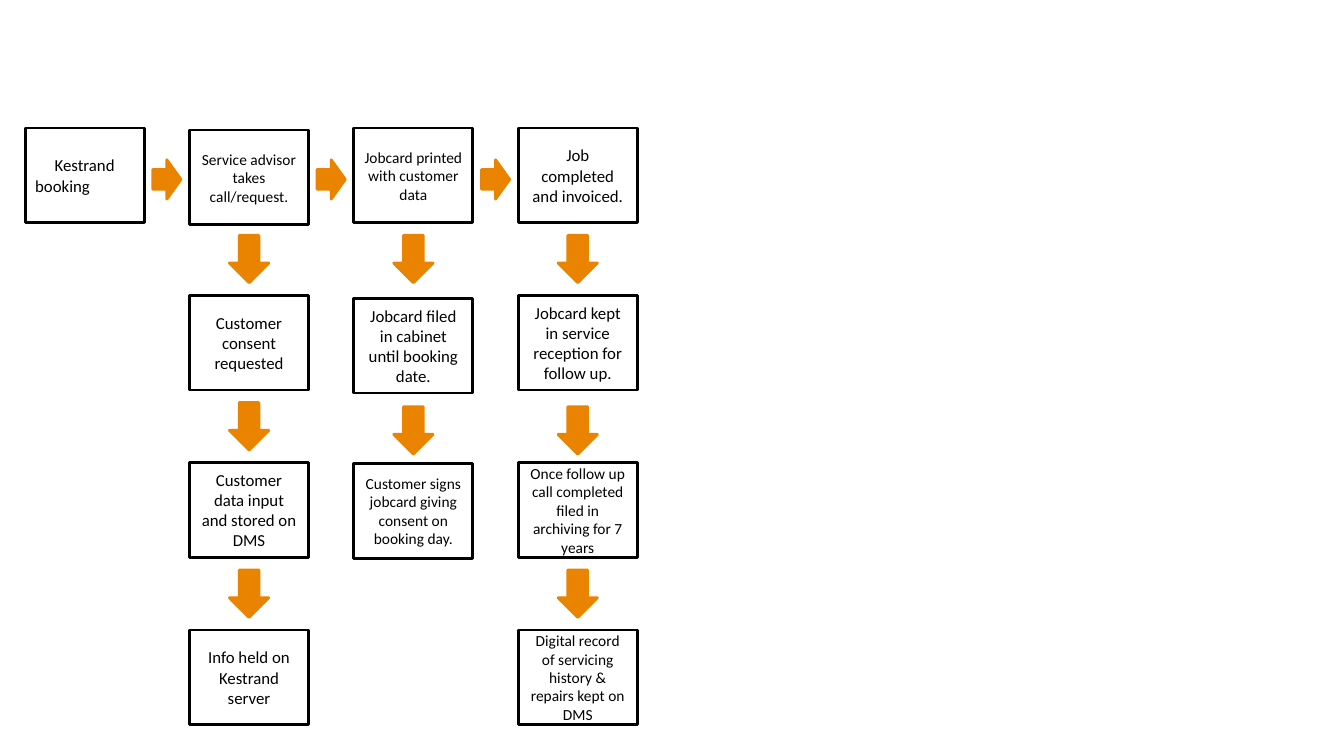
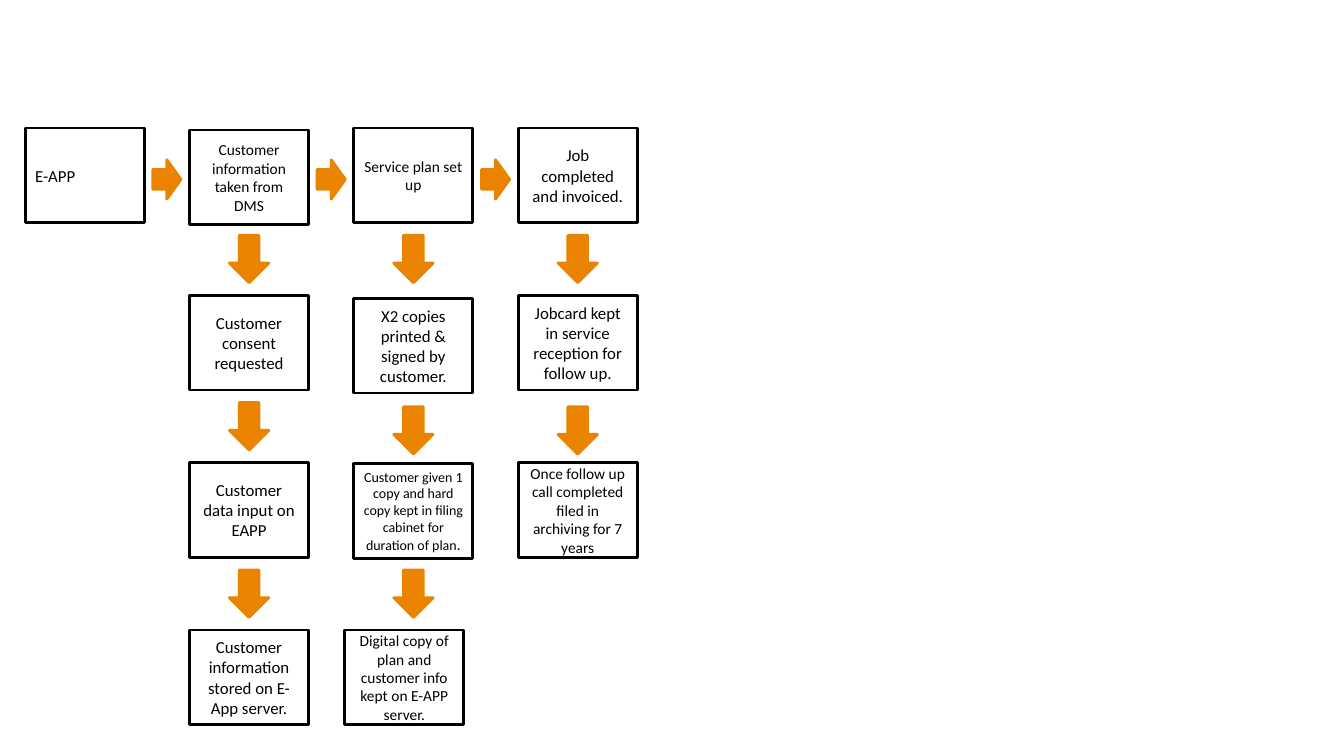
from dataclasses import dataclass

from lxml.etree import SubElement
from pptx import Presentation
from pptx.dml.color import RGBColor
from pptx.enum.shapes import MSO_SHAPE as Shape
from pptx.enum.text import MSO_ANCHOR as Anchor, PP_ALIGN as Align
from pptx.oxml.ns import qn
from pptx.util import Inches, Pt

COLORS = {"paper": "FFFFFF", "ink": "000000", "flow": "E98300"}
FONT = "Calibri"

SLIDE_W, SLIDE_H = 13.33, 7.5
LEFT, TOP = 0.25, 1.27
COLUMN_PITCH, ROW_PITCH = 1.63, 1.66
BOX_W, BOX_H = 1.18, 0.94
ARROW_SPAN = 0.39
ACROSS_LENGTH, DOWN_LENGTH = 0.28, 0.47
ACROSS_DROP = 0.04


@dataclass(frozen=True)
class Step:
    """One box of a flow; dx and dy shift it, arrow_dy shifts the arrow below it."""
    text: str
    size: int = 12
    dx: float = 0
    dy: float = 0
    arrow_dy: float = 0
    last_align: Align = Align.CENTER
    ending: str = ""
    ending_size: int = 11


CONSENT = Step("Customer consent requested")
COMPLETED = Step("Job completed and invoiced.")
FOLLOW_UP = Step("Jobcard kept in service reception for follow up.", arrow_dy=0.04)
ARCHIVED = Step("Once follow up call completed filed in archiving for 7 years", 11)

BOOKING_FLOW = [
    [Step("Kestrand\nbooking", last_align=Align.LEFT)],
    [Step("Service advisor takes call/request.", 11, dy=0.02),
     CONSENT,
     Step("Customer data input and stored on DMS"),
     Step("Info held on Kestrand server")],
    [Step("Jobcard printed with customer data", 11),
     Step("Jobcard filed in cabinet until booking date.", dy=0.03, arrow_dy=0.04),
     Step("Customer signs jobcard giving consent on booking day.", 11, dy=0.01)],
    [COMPLETED, FOLLOW_UP, ARCHIVED,
     Step("Digital record of servicing history & repairs kept on DMS", 11)],
]

PLAN_FLOW = [
    [Step("E-APP", last_align=Align.LEFT)],
    [Step("Customer information taken from DMS", 11, dy=0.02),
     CONSENT,
     Step("Customer data input on EAPP"),
     Step("Customer information stored on E-App server.")],
    [Step("Service plan set up", 11),
     Step("X2 copies printed & signed by customer.", dy=0.03, arrow_dy=0.04),
     Step("Customer given 1 copy and hard copy kept in filing cabinet "
          "for duration of plan", 10, dy=0.01, ending="."),
     Step("Digital copy of plan and customer info kept on E-APP server.", 11,
          dx=-0.09)],
    [COMPLETED, FOLLOW_UP, ARCHIVED],
]


def write(paragraph, text, *, size, align=Align.CENTER, color="ink"):
    paragraph.alignment = align
    run = paragraph.add_run()
    run.text = text
    run.font.name = FONT
    run.font.size = Pt(size)
    run.font.color.rgb = RGBColor.from_string(COLORS[color])


def add_outlined(slide, kind, center, size, *, fill, line):
    """Add a filled shape around its centre, with a round-cornered outline."""
    (x, y), (width, height) = center, size
    shape = slide.shapes.add_shape(kind, Inches(x - width / 2), Inches(y - height / 2),
                                   Inches(width), Inches(height))
    shape.shadow.inherit = False
    shape.fill.solid()
    shape.fill.fore_color.rgb = RGBColor.from_string(COLORS[fill])
    shape.line.color.rgb = RGBColor.from_string(COLORS[line])
    shape.line.width = Pt(2)
    SubElement(shape.line._get_or_add_ln(), qn("a:round"))
    return shape


def cell_center(column, row):
    return (LEFT + column * COLUMN_PITCH + BOX_W / 2,
            TOP + row * ROW_PITCH + BOX_H / 2)


def add_step(slide, step, column, row):
    x, y = cell_center(column, row)
    box = add_outlined(slide, Shape.RECTANGLE, (x + step.dx, y + step.dy),
                       (BOX_W, BOX_H), fill="paper", line="ink")
    frame = box.text_frame
    frame.word_wrap = True
    frame.vertical_anchor = Anchor.MIDDLE
    lines = step.text.split("\n")
    for index, text in enumerate(lines):
        paragraph = frame.add_paragraph() if index else frame.paragraphs[0]
        is_last = index == len(lines) - 1
        write(paragraph, text, size=step.size,
              align=step.last_align if is_last else Align.CENTER)
    if step.ending:
        write(paragraph, step.ending, size=step.ending_size, align=step.last_align)


def add_arrow_across(slide, column):
    x, y = cell_center(column + 0.5, 0)
    add_outlined(slide, Shape.RIGHT_ARROW, (x, y + ACROSS_DROP),
                 (ACROSS_LENGTH, ARROW_SPAN), fill="flow", line="flow")


def add_arrow_down(slide, step, column, row):
    x, y = cell_center(column, row + 0.5)
    add_outlined(slide, Shape.DOWN_ARROW, (x, y + step.arrow_dy),
                 (ARROW_SPAN, DOWN_LENGTH), fill="flow", line="flow")


def add_flow(deck, flow):
    slide = deck.slides.add_slide(deck.slide_layouts[6])
    for column, steps in enumerate(flow):
        if column < len(flow) - 1:
            add_arrow_across(slide, column)
        for row, step in enumerate(steps):
            add_step(slide, step, column, row)
            if row < len(steps) - 1:
                add_arrow_down(slide, step, column, row)


def main():
    deck = Presentation()
    deck.slide_width, deck.slide_height = Inches(SLIDE_W), Inches(SLIDE_H)
    for flow in (BOOKING_FLOW, PLAN_FLOW):
        add_flow(deck, flow)
    deck.save("out.pptx")


if __name__ == "__main__":
    main()
